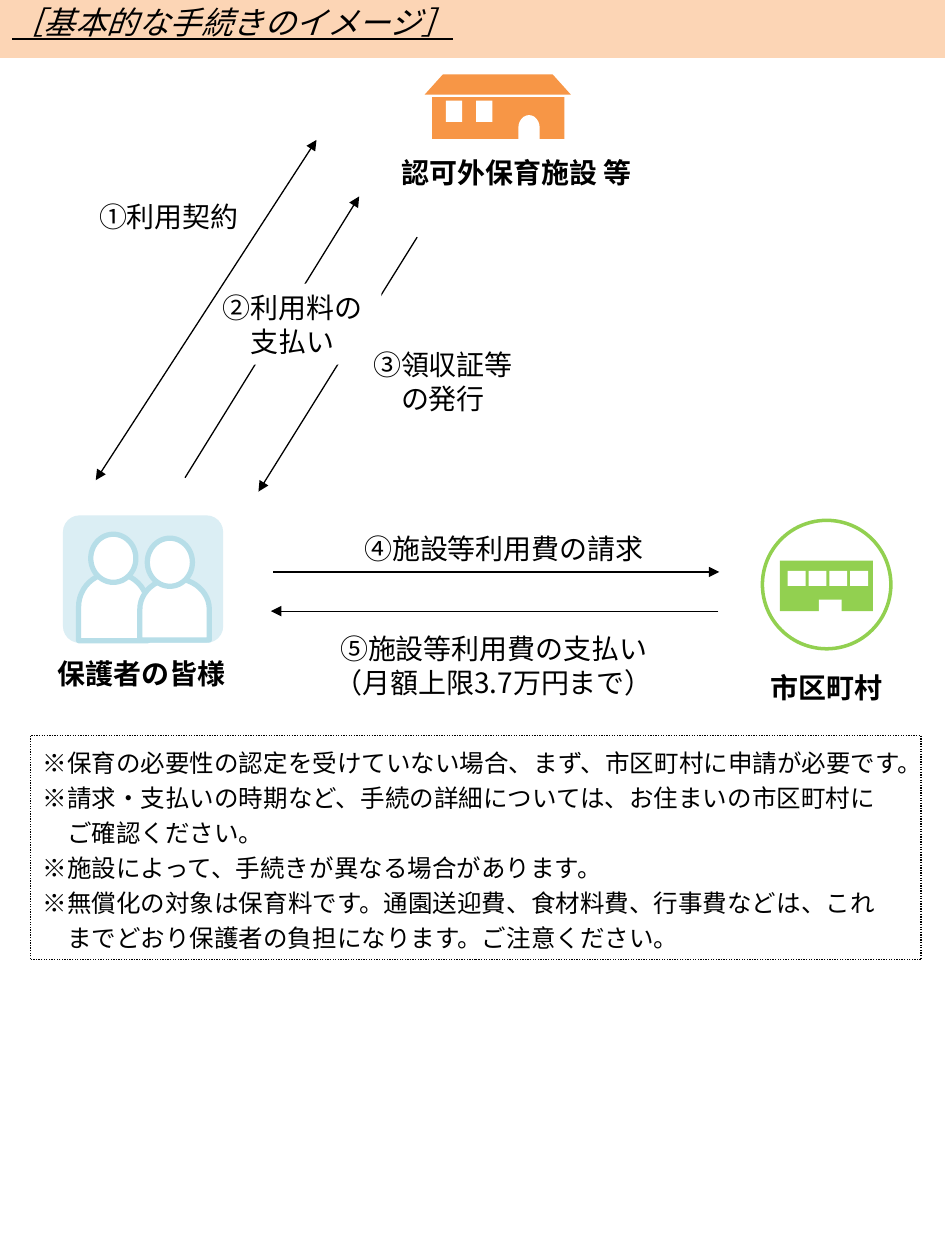
import pptx
import pptx.util
import pptx.dml.color
import pptx.enum.dml
import pptx.enum.shapes
import pptx.enum.text
import pptx.oxml.ns
from lxml import etree

Cm, Pt = pptx.util.Cm, pptx.util.Pt
SHAPE = pptx.enum.shapes.MSO_SHAPE
ALIGN = pptx.enum.text.PP_ALIGN
ANCHOR = pptx.enum.text.MSO_ANCHOR
FONT = "Noto Sans CJK JP"
BLACK, WHITE = "000000", "FFFFFF"
ORANGE, GREEN, PALE_BLUE, BLUE = "F79646", "92D050", "DBEEF4", "B7DEE8"

TITLE = "［基本的な手続きのイメージ］"
NOTES = [
    ("※保育の必要性の認定を受けていない場合、まず、市区町村に申請が必要です。", 0),
    ("※請求・支払いの時期など、手続の詳細については、お住まいの市区町村に", 0),
    ("ご確認ください。", 14),
    ("※施設によって、手続きが異なる場合があります。", 0),
    ("※無償化の対象は保育料です。通園送迎費、食材料費、行事費などは、これ", 0),
    ("までどおり保護者の負担になります。ご注意ください。", 14),
]
PARTY_LABELS = [
    ("認可外保育施設 等", (7.52, 3, 5.79, 0.94)),
    ("保護者の皆様", (0.33, 13.11, 5.05, 0.89)),
    ("市区町村", (14.76, 13.39, 3.81, 0.94)),
]
STEPS = [
    (["②利用料の", "支払い"], (4.11, 5.72, 3.58, 1.63), WHITE),
    (["③領収証等", "の発行"], (7.14, 6.88, 3.58, 1.63), WHITE),
    (["①利用契約"], (1.65, 3.89, 3.51, 0.94), None),
    (["④施設等利用費の請求"], (6.4, 10.59, 7.52, 0.94), None),
    (["⑤施設等利用費の支払い", "（月額上限3.7万円まで）"], (5.74, 12.6, 8.43, 1.63), None),
]
ONE_WAY_ARROWS = [
    (5.51, 11.53, 14.5, 11.53),
    (14.48, 12.32, 5.46, 12.32),
    (8.41, 4.78, 5.21, 9.91),
    (3.73, 9.63, 7.24, 3.96),
]
CONTRACT_ARROW = (1.93, 9.68, 6.38, 2.82)

HOUSE = [
    (SHAPE.RECTANGLE, (8.71, 1.96, 2.67, 0.84), ORANGE, {}),
    (SHAPE.TRAPEZOID, (8.56, 1.5, 2.95, 0.41), ORANGE, {"adjustment": 0.9}),
    *[(SHAPE.RECTANGLE, (8.99 + 0.61 * i, 2.03, 0.33, 0.43), WHITE, {}) for i in range(2)],
    (SHAPE.FLOWCHART_DELAY, (10.41, 2.36, 0.51, 0.43), WHITE, {"rotation": 270}),
]
TOWN_HALL = [
    (SHAPE.OVAL, (15.37, 10.49, 2.59, 2.59), WHITE, {"line": GREEN, "width": 2}),
    (SHAPE.RECTANGLE, (15.72, 11.3, 1.88, 1.02), GREEN, {}),
    (SHAPE.RECTANGLE, (16.51, 12.09, 0.46, 0.25), WHITE, {}),
    *[(SHAPE.RECTANGLE, (15.88 + 0.42 * i, 11.51, 0.36, 0.3), WHITE, {}) for i in range(4)],
]
OUTLINE = {"line": BLUE, "width": 3}
BODY = {**OUTLINE, "rotation": 270}
PARENTS = [
    (SHAPE.ROUNDED_RECTANGLE, (1.27, 10.39, 3.23, 2.57), PALE_BLUE, {"adjustment": 0.13}),
    (SHAPE.FLOWCHART_DELAY, (1.6, 11.53, 1.37, 1.4), WHITE, BODY),
    (SHAPE.OVAL, (1.83, 10.77, 0.91, 0.97), WHITE, OUTLINE),
    (SHAPE.FLOWCHART_DELAY, (2.9, 11.58, 1.24, 1.4), WHITE, BODY),
    (SHAPE.OVAL, (2.97, 10.85, 0.91, 0.97), WHITE, OUTLINE),
]


def color(value):
    return pptx.dml.color.RGBColor.from_string(value)


def add_shape(shapes, kind, box, fill=None, line=None, width=0.75,
              rotation=0, adjustment=None):
    shape = shapes.add_shape(kind, *map(Cm, box))
    shape.shadow.inherit = False
    shape.rotation = rotation
    if adjustment is not None:
        shape.adjustments[0] = adjustment
    if fill:
        shape.fill.solid()
        shape.fill.fore_color.rgb = color(fill)
    else:
        shape.fill.background()
    if line:
        shape.line.color.rgb = color(line)
        shape.line.width = Pt(width)
    else:
        shape.line.fill.background()
    return shape


def add_icon(slide, parts):
    group = slide.shapes.add_group_shape()
    for kind, box, fill, options in parts:
        add_shape(group.shapes, kind, box, fill, **options)


def write_text(shape, lines, size=16, spacing=19.4, align=ALIGN.CENTER,
               anchor=ANCHOR.TOP, bold=False, italic=False, underline=False,
               right_margin=0.25):
    frame = shape.text_frame
    frame.word_wrap = True
    frame.vertical_anchor = anchor
    frame.margin_right = Cm(right_margin)
    for index, (text, indent) in enumerate(lines):
        paragraph = frame.paragraphs[0] if index == 0 else frame.add_paragraph()
        paragraph.alignment = align
        paragraph.line_spacing = Pt(spacing)
        if indent:
            properties = paragraph._p.get_or_add_pPr()
            properties.set("marL", str(Pt(indent)))
            properties.set("indent", "0")
        run = paragraph.add_run()
        run.text = text
        font = run.font
        font.name, font.size = FONT, Pt(size)
        font.bold, font.italic, font.underline = bold, italic, underline
        font.color.rgb = color(BLACK)
        east_asian = etree.SubElement(font._element, pptx.oxml.ns.qn("a:ea"))
        east_asian.set("typeface", FONT)


def add_label(slide, lines, box, fill=None, bold=False):
    if fill:
        shape = add_shape(slide.shapes, SHAPE.RECTANGLE, box, fill)
    else:
        shape = slide.shapes.add_textbox(*map(Cm, box))
    write_text(shape, [(line, 0) for line in lines], bold=bold)


def add_arrow(slide, ends, heads=("tailEnd",)):
    straight = pptx.enum.shapes.MSO_CONNECTOR.STRAIGHT
    connector = slide.shapes.add_connector(straight, *map(Cm, ends))
    connector.line.color.rgb = color(BLACK)
    connector.line.width = Pt(0.75)
    line = connector.line._get_or_add_ln()
    for head in heads:
        etree.SubElement(line, pptx.oxml.ns.qn(f"a:{head}")).set("type", "triangle")
    etree.SubElement(connector._element.spPr, pptx.oxml.ns.qn("a:effectLst"))


def main():
    presentation = pptx.Presentation()
    presentation.slide_width, presentation.slide_height = Cm(19.05), Cm(25.4)
    slide = presentation.slides.add_slide(presentation.slide_layouts[6])

    banner = add_shape(slide.shapes, SHAPE.RECTANGLE, (0, -0.1, 19.05, 1.27), "FCD5B5")
    write_text(banner, [(TITLE, 0)], size=18, spacing=16, align=ALIGN.LEFT,
               anchor=ANCHOR.MIDDLE, italic=True, underline=True)

    for icon in (HOUSE, TOWN_HALL, PARENTS):
        add_icon(slide, icon)
    for text, box in PARTY_LABELS:
        add_label(slide, [text], box, bold=True)

    for ends in ONE_WAY_ARROWS:
        add_arrow(slide, ends)
    add_label(slide, *STEPS[0])
    add_arrow(slide, CONTRACT_ARROW, heads=("headEnd", "tailEnd"))
    for step in STEPS[1:]:
        add_label(slide, *step)

    notes = add_shape(slide.shapes, SHAPE.RECTANGLE, (0.61, 14.83, 17.96, 4.52), line=BLACK)
    notes.line.dash_style = pptx.enum.dml.MSO_LINE.ROUND_DOT
    write_text(notes, NOTES, size=14, spacing=20, align=ALIGN.LEFT,
               anchor=ANCHOR.MIDDLE, right_margin=0)

    presentation.save("out.pptx")


if __name__ == "__main__":
    main()
